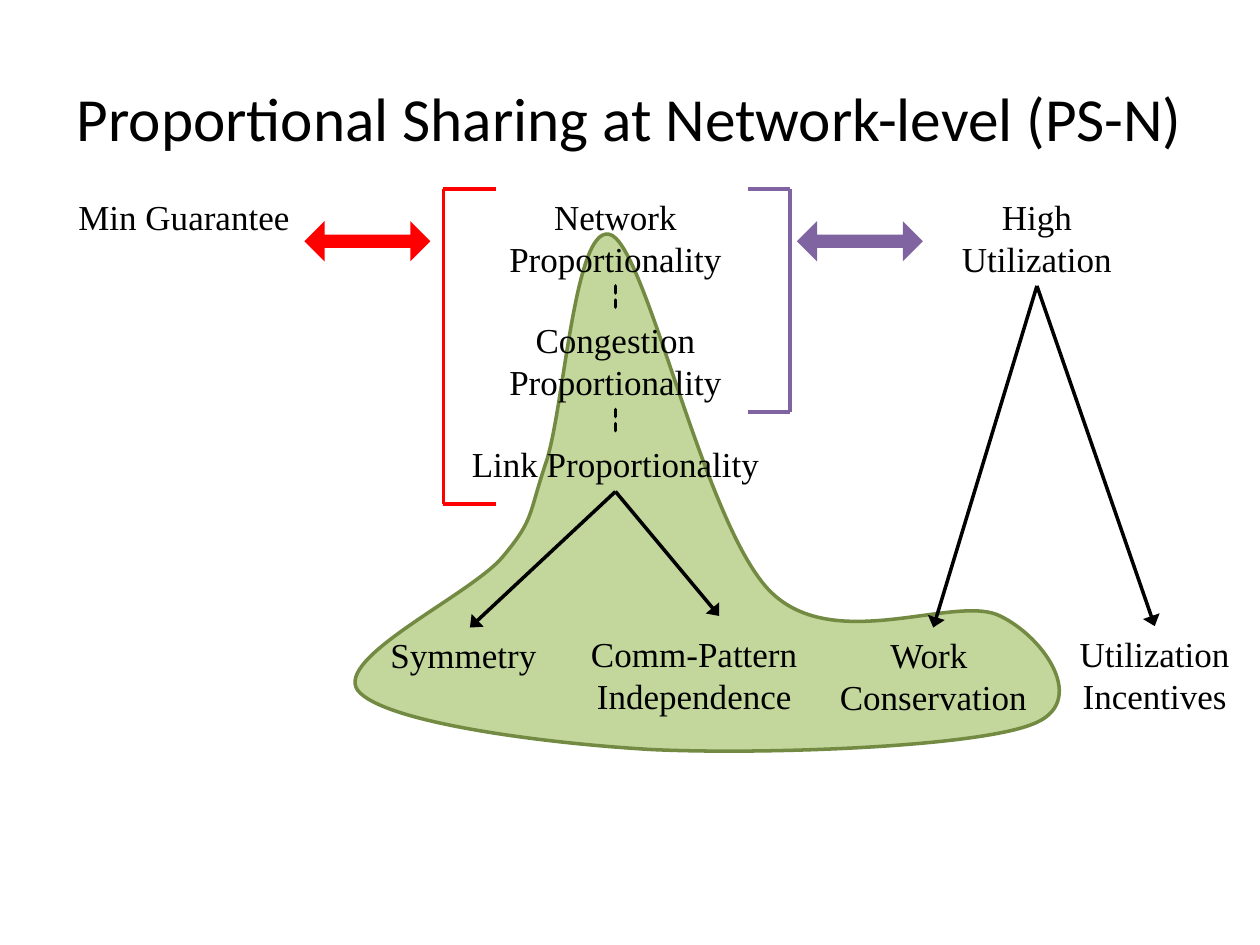
from lxml.etree import SubElement
from pptx import Presentation
from pptx.dml.color import RGBColor
from pptx.enum.dml import MSO_LINE_DASH_STYLE as DASH
from pptx.enum.shapes import MSO_CONNECTOR_TYPE as CONN, MSO_SHAPE as SHAPE
from pptx.enum.text import MSO_ANCHOR as ANCHOR, MSO_AUTO_SIZE as AUTO, PP_ALIGN as ALIGN
from pptx.oxml.ns import qn
from pptx.util import Pt

BLACK, RED, PURPLE = "000000", "FF0000", "8064A2"
GREEN, DARK_GREEN = "C3D69B", "738A42"
TOP, BOTTOM = 0, 2
BLOB_START = (311.8, 265)
BLOB_CURVES = [
    ((301.7, 295.2), (305.3, 296.6), (287.3, 318.2)),
    ((269.3, 339.8), (190.8, 375.8), (204.5, 394.6)),
    ((218.9, 412.6), (308.9, 424.8), (373, 428.4)),
    ((437, 431.3), (556.6, 427), (589.7, 414)),
    ((622.8, 401.8), (596.9, 364.3), (571.7, 352.1)),
    ((546.5, 339.1), (477.4, 374.4), (440.6, 338.4)),
    ((403.2, 301.7), (370.8, 146.9), (349.9, 134.6)),
    ((328.3, 123.1), (322.6, 234), BLOB_START),
]


def rgb(value):
    return RGBColor.from_string(value)


def add_text(s, box, lines, size=20, font="Times New Roman", wrap=True, align=ALIGN.CENTER,
             anchor=ANCHOR.TOP, grow=True):
    sp = s.shapes.add_textbox(*map(Pt, box))
    tf = sp.text_frame
    tf.word_wrap = wrap
    tf.vertical_anchor = anchor
    tf.auto_size = AUTO.SHAPE_TO_FIT_TEXT if grow else AUTO.NONE
    for i, line in enumerate(lines):
        p = tf.paragraphs[0] if i == 0 else tf.add_paragraph()
        p.alignment = align
        r = p.add_run()
        r.text = line
        r.font.size = Pt(size)
        r.font.name = font
        r.font.color.rgb = rgb(BLACK)
    return sp


def add_line(shapes, start, end, color=BLACK):
    c = shapes.add_connector(CONN.STRAIGHT, *map(Pt, (*start, *end)))
    c.line.color.rgb = rgb(color)
    c.line.width = Pt(2)
    SubElement(c._element.spPr, qn("a:effectLst"))
    return c


def join(s, upper, lower=None, end=(0, 0), arrow=True):
    c = add_line(s.shapes, (0, 0), end)
    c.begin_connect(upper, BOTTOM)
    if lower is not None:
        c.end_connect(lower, TOP)
    ln = c.line._get_or_add_ln()
    if arrow:
        SubElement(ln, qn("a:tailEnd"), type="triangle", w="lg", len="med")
    else:
        c.line.dash_style = DASH.SQUARE_DOT
        ln.set("cap", "rnd")


def add_bracket(s, spine, tip, top, bottom, color):
    group = s.shapes.add_group_shape()
    for y in (top, bottom):
        add_line(group.shapes, (spine, y), (tip, y), color)
    add_line(group.shapes, (spine, top), (spine, bottom), color)


def add_double_arrow(s, box, color):
    sp = s.shapes.add_shape(SHAPE.LEFT_RIGHT_ARROW, *map(Pt, box))
    sp.shadow.inherit = False
    sp.adjustments[0] = 0.332
    sp.adjustments[1] = 0.5
    sp.fill.solid()
    sp.fill.fore_color.rgb = rgb(color)
    sp.line.fill.background()


def add_blob(s, box, start, curves):
    left, top, width, height = box
    fb = s.shapes.build_freeform(*start, scale=Pt(1))
    fb.add_line_segments([curve[-1] for curve in curves], close=True)
    sp = fb.convert_to_shape()
    sp.left, sp.top, sp.width, sp.height = map(Pt, box)
    outline = next(sp._element.iter(qn("a:path")))
    outline.set("w", str(Pt(width)))
    outline.set("h", str(Pt(height)))
    for child in list(outline):
        outline.remove(child)
    for tag, points in [("a:moveTo", [start])] + [("a:cubicBezTo", curve) for curve in curves]:
        step = SubElement(outline, qn(tag))
        for x, y in points:
            SubElement(step, qn("a:pt"), x=str(Pt(x - left)), y=str(Pt(y - top)))
    SubElement(outline, qn("a:close"))
    sp.shadow.inherit = False
    sp.fill.solid()
    sp.fill.fore_color.rgb = rgb(GREEN)
    sp.line.color.rgb = rgb(DARK_GREEN)
    sp.line.width = Pt(2)


def add_proportionality(s, left, top, width):
    network = add_text(s, (left, top, width, 55.4), ["Network Proportionality"])
    congestion = add_text(s, (left, top + 70.6, width, 55.4), ["Congestion Proportionality"])
    link = add_text(s, (left + 1.4, top + 141.2, width - 2.8, 31.7), ["Link Proportionality"])
    symmetry = add_text(s, (216, 358.6, 105.1, 31.7), ["Symmetry"], wrap=False, align=ALIGN.LEFT)
    add_text(s, (324, 357.8, 145.4, 55.4), ["Comm-Pattern", "Independence"], wrap=False)
    join(s, network, congestion, arrow=False)
    join(s, congestion, link, arrow=False)
    join(s, link, symmetry)
    join(s, link, end=(411, 352))


def add_utilization(s, left, top, width):
    high = add_text(s, (left, top, width, 55.4), ["High Utilization"])
    work = add_text(s, (462, 358.6, 142.6, 55.4), ["Work ", "Conservation"])
    incentives = add_text(s, (607.3, 357.8, 105.1, 55.4), ["Utilization", "Incentives"], wrap=False)
    join(s, high, work)
    join(s, high, incentives)


def main():
    prs = Presentation()
    prs.slide_width, prs.slide_height = Pt(720), Pt(540)
    s = prs.slides.add_slide(prs.slide_layouts[6])
    add_blob(s, (203, 134, 402.5, 295.2), BLOB_START, BLOB_CURVES)
    add_text(s, (36, 21.6, 648, 90), ["Proportional Sharing at Network-level (PS-N)"],
             size=35, font="Calibri", anchor=ANCHOR.MIDDLE, grow=False)
    add_bracket(s, 253.4, 283.7, 108, 288, RED)
    add_bracket(s, 451.4, 427.7, 108, 235.4, PURPLE)
    add_text(s, (36, 108, 138.2, 55.4), ["Min Guarantee"])
    add_double_arrow(s, (174, 126.4, 72, 23), RED)
    add_double_arrow(s, (455.4, 126.4, 72, 23), PURPLE)
    add_proportionality(s, 252, 108, 199.4)
    add_utilization(s, 522, 108, 141.1)
    prs.save("out.pptx")


if __name__ == "__main__":
    main()
